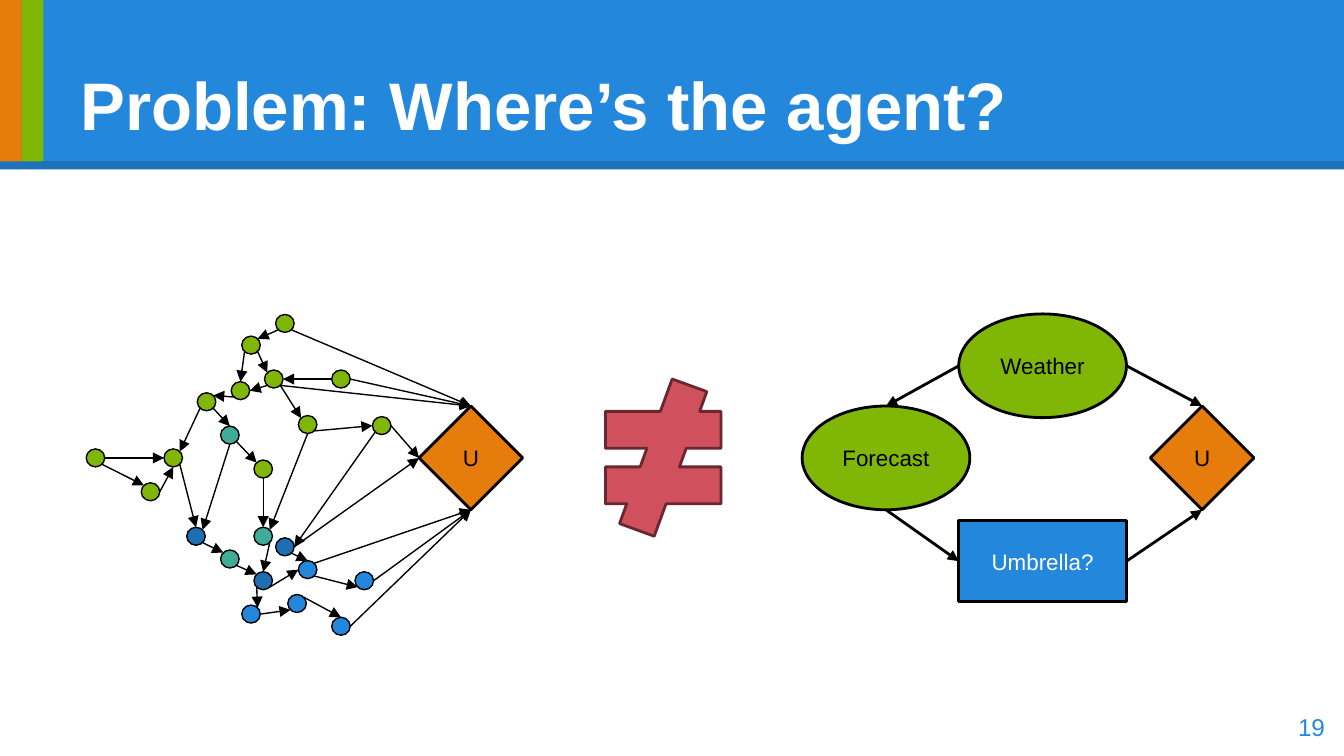
"""Build a slide contrasting a tangled influence network with a simple decision diagram."""
import pptx
import pptx.chart.data
import pptx.dml.color
import pptx.enum.shapes
import pptx.enum.text
import pptx.util
from lxml import etree

Cm, Pt = pptx.util.Cm, pptx.util.Pt
Kind = pptx.enum.shapes.MSO_SHAPE
Link = pptx.enum.shapes.MSO_CONNECTOR
Align = pptx.enum.text.PP_ALIGN
Anchor = pptx.enum.text.MSO_ANCHOR
BLACK, WHITE = "000000", "FFFFFF"
BLUE, NAVY, GREEN, TEAL, ORANGE = "2388DB", "1D6FB2", "80B606", "3FAC98", "E67C0B"
DIAG = 0.5 ** 0.5 / 2
SITES = {
    "n": (0.5, 0), "s": (0.5, 1), "w": (0, 0.5), "e": (1, 0.5),
    "nw": (0.5 - DIAG, 0.5 - DIAG), "ne": (0.5 + DIAG, 0.5 - DIAG),
    "sw": (0.5 - DIAG, 0.5 + DIAG), "se": (0.5 + DIAG, 0.5 + DIAG),
}


def paint(part, color):
    part.fill.solid()
    part.fill.fore_color.rgb = pptx.dml.color.RGBColor.from_string(color)


def draw(kind, left, top, width, height, fill, edge=None, weight=1.5):
    shape = slide.shapes.add_shape(kind, Cm(left), Cm(top), Cm(width), Cm(height))
    shape.shadow.inherit = False
    paint(shape, fill)
    if edge:
        paint(shape.line, edge)
        shape.line.width = Pt(weight)
    else:
        shape.line.fill.background()
    return shape


deck = pptx.Presentation()
deck.slide_width, deck.slide_height = Cm(25.4), Cm(14.28)
slide = deck.slides.add_slide(deck.slide_layouts[6])

draw(Kind.RECTANGLE, 0, 0, 25.4, 3.2, BLUE)
rule = slide.shapes.add_connector(Link.STRAIGHT, 0, Cm(3.12), Cm(25.4), Cm(3.12))
paint(rule.line, BLACK)
rule.line.width = Pt(4.5)
tint = rule.line.fill._xPr.find(".//" + pptx.oxml.ns.qn("a:srgbClr"))
etree.SubElement(tint, pptx.oxml.ns.qn("a:alpha"), val="15000")
etree.SubElement(rule._element.spPr, pptx.oxml.ns.qn("a:effectLst"))
for left, color in [(0.41, GREEN), (0, ORANGE)]:
    draw(Kind.RECTANGLE, left, 0, 0.41, 3.05, color)

nodes = {
    "weather": draw(Kind.OVAL, 18.12, 5.93, 3.17, 1.96, GREEN, BLACK),
    "forecast": draw(Kind.OVAL, 15.16, 7.67, 3.17, 1.96, GREEN, BLACK),
    "choice": draw(Kind.RECTANGLE, 18.12, 9.83, 3.17, 1.54, BLUE, BLACK),
    "value": draw(Kind.DIAMOND, 21.74, 7.67, 1.96, 1.96, ORANGE, BLACK),
    "U": draw(Kind.DIAMOND, 7.92, 7.67, 1.96, 1.96, ORANGE, BLACK),
}
groups = {
    GREEN: {
        "a": (5.21, 5.94), "b": (4.57, 6.35), "c": (5, 6.99), "d": (3.73, 7.42),
        "f": (4.37, 7.21), "g": (4.8, 8.69), "h": (2.67, 9.12), "i": (3.1, 8.48),
        "k": (6.27, 6.99), "l": (5.64, 7.85), "n": (7.04, 7.87), "o": (1.63, 8.48),
    },
    TEAL: {"e": (4.17, 8.05), "m": (4.17, 10.39), "p": (4.8, 9.96)},
    NAVY: {"j": (3.53, 9.96), "q": (4.8, 10.8), "r": (5.21, 10.16)},
    BLUE: {
        "s": (5.64, 10.59), "t": (4.57, 11.43), "u": (5.44, 11.23),
        "v": (6.27, 11.66), "w": (6.71, 10.8),
    },
}
for color, dots in groups.items():
    for name, (left, top) in dots.items():
        nodes[name] = draw(Kind.OVAL, left, top, 0.35, 0.34, color, BLACK, 0.75)

thick = ["weather w forecast n", "weather e value n", "forecast s choice w", "choice e value s"]
thin = [
    "a sw b ne", "b se c nw", "k w c e", "a se U n", "k e U n", "c se U n",
    "c sw f e", "b sw f n", "f sw d ne", "d sw i ne", "o e i w", "o se h nw",
    "h e i s", "i se j n", "d se e n", "e s j ne", "e se g nw", "c se l nw",
    "l s p ne", "g s p n", "j se m nw", "l se n w", "n sw r e", "n e U w",
    "p se q n", "m se q nw", "q sw t ne", "t e u sw", "u ne v n", "q se s w",
    "r se s n", "s se w sw", "w e U s", "v e U s", "s ne U s", "r e U w",
]
for weight, links in [(1.5, thick), (0.75, thin)]:
    for link in links:
        start, out, end, into = link.split()
        ends = []
        for name, site in [(start, out), (end, into)]:
            node, (across, down) = nodes[name], SITES[site]
            ends += [int(node.left + across * node.width), int(node.top + down * node.height)]
        arrow = slide.shapes.add_connector(Link.STRAIGHT, *ends)
        paint(arrow.line, BLACK)
        arrow.line.width = Pt(weight)
        etree.SubElement(arrow.line._get_or_add_ln(), pptx.oxml.ns.qn("a:tailEnd"), type="triangle")
        etree.SubElement(arrow._element.spPr, pptx.oxml.ns.qn("a:effectLst"))

unlike = draw(Kind.MATH_NOT_EQUAL, 11.05, 7.16, 2.97, 2.97, "D1505E", "69282F")
for spot, value in enumerate([0.235, 66, 0.118]):
    unlike.adjustments[spot] = value

title = slide.shapes.add_textbox(Cm(1.27), Cm(0.58), Cm(22.86), Cm(2.39))
number = slide.shapes.add_textbox(Cm(23.77), Cm(13.18), Cm(1.52), Cm(1.09))
labels = [
    (title, "Problem: Where’s the agent?", 36, WHITE, Align.LEFT, Anchor.BOTTOM),
    (number, "19", 13, BLUE, Align.RIGHT, Anchor.MIDDLE),
    (nodes["weather"], "Weather", 12, BLACK, Align.CENTER, Anchor.MIDDLE),
    (nodes["forecast"], "Forecast", 12, BLACK, Align.CENTER, Anchor.MIDDLE),
    (nodes["choice"], "Umbrella?", 12, WHITE, Align.CENTER, Anchor.MIDDLE),
    (nodes["value"], "U", 12, BLACK, Align.CENTER, Anchor.MIDDLE),
    (nodes["U"], "U", 12, BLACK, Align.CENTER, Anchor.MIDDLE),
]
for shape, words, size, color, align, anchor in labels:
    frame = shape.text_frame
    frame.word_wrap = True
    frame.vertical_anchor = anchor
    frame.margin_left = frame.margin_right = Cm(0.25)
    frame.margin_top = frame.margin_bottom = Cm(0.25)
    line = frame.paragraphs[0]
    line.text = words
    line.alignment = align
    line.font.name, line.font.size = "Arial", Pt(size)
    line.font.bold = shape is title
    paint(line.font, color)

deck.save("out.pptx")
